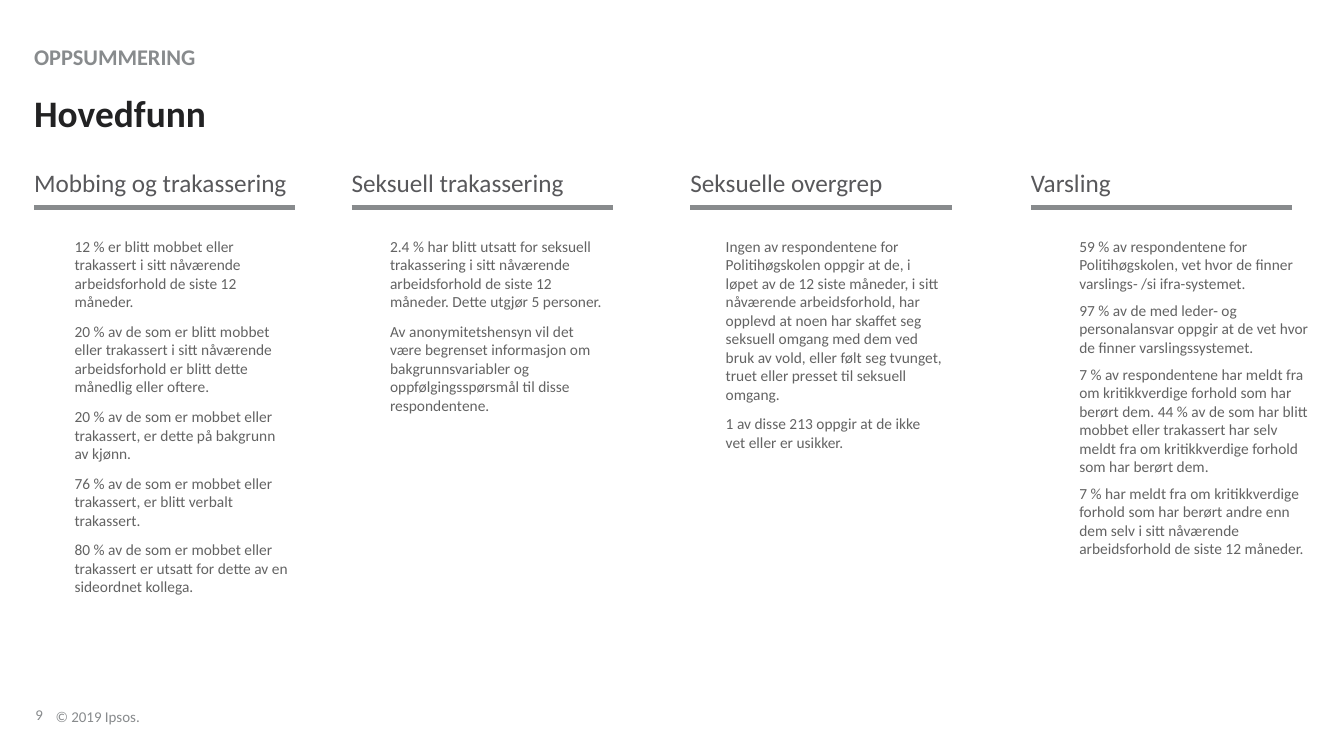
import pptx
import pptx.dml.color
import pptx.enum.shapes
import pptx.enum.text
import pptx.util
from lxml import etree
from pptx.oxml.ns import qn
from pptx.util import Cm

FONT = "Calibri"
GREY, BLACK, HEADING, BODY = "888B8D", "222223", "58585B", "636363"
LEFT = 0.86
HEADING_TOP, RULE_TOP, BODY_TOP = 4.22, 5.23, 5.97
COLUMN_WIDTH = 6.58

# heading, heading left, findings left, findings width, paragraph gap in points, findings
COLUMNS = [
    ("Mobbing og trakassering", LEFT, 1.88, 5.49, 8, [
        "12 % er blitt mobbet eller trakassert i sitt nåværende arbeidsforhold de siste 12 måneder.",
        "20 % av de som er blitt mobbet eller trakassert i sitt nåværende arbeidsforhold er blitt "
        "dette månedlig eller oftere.",
        "20 % av de som er mobbet eller trakassert, er dette på bakgrunn av kjønn.",
        "76 % av de som er mobbet eller trakassert, er blitt verbalt trakassert.",
        "80 % av de som er mobbet eller trakassert er utsatt for dette av en sideordnet kollega.",
    ]),
    ("Seksuell trakassering", 8.86, 9.83, 5.44, 8, [
        "2.4 % har blitt utsatt for seksuell trakassering i sitt nåværende arbeidsforhold de siste "
        "12 måneder. Dette utgjør 5 personer.",
        "Av anonymitetshensyn vil det være begrenset informasjon om bakgrunnsvariabler og "
        "oppfølgingsspørsmål til disse respondentene.",
    ]),
    ("Seksuelle overgrep", 17.4, 18.29, 5.49, 8, [
        "Ingen av respondentene for Politihøgskolen oppgir at de, i løpet av de 12 siste måneder, "
        "i sitt nåværende arbeidsforhold, har opplevd at noen har skaffet seg seksuell omgang med "
        "dem ved bruk av vold, eller følt seg tvunget, truet eller presset til seksuell omgang.",
        "1 av disse 213 oppgir at de ikke vet eller er usikker.",
    ]),
    ("Varsling", 25.98, 27.2, 5.87, 6, [
        "59 % av respondentene for Politihøgskolen, vet hvor de finner varslings- /si ifra-systemet.",
        "97 % av de med leder- og personalansvar oppgir at de vet hvor de finner varslingssystemet.",
        "7 % av respondentene har meldt fra om kritikkverdige forhold som har berørt dem. 44 % av "
        "de som har blitt mobbet eller trakassert har selv meldt fra om kritikkverdige forhold som "
        "har berørt dem.",
        "7 % har meldt fra om kritikkverdige forhold som har berørt andre enn dem selv i sitt "
        "nåværende arbeidsforhold de siste 12 måneder.",
    ]),
]


def rgb(value):
    return pptx.dml.color.RGBColor.from_string(value)


def add_text(s, paragraphs, left, top, width, height, *, size, color, bold=False,
             gap=0, line_spacing=1.0, anchor="TOP"):
    """Add a text box without insets; gap is the space in points between paragraphs."""
    tf = s.shapes.add_textbox(Cm(left), Cm(top), Cm(width), Cm(height)).text_frame
    tf.word_wrap = True
    tf.margin_left = tf.margin_right = tf.margin_top = tf.margin_bottom = 0
    tf.vertical_anchor = pptx.enum.text.MSO_ANCHOR[anchor]
    for i, text in enumerate(paragraphs):
        p = tf.add_paragraph() if i else tf.paragraphs[0]
        p.line_spacing = line_spacing
        if i:
            p.space_before = pptx.util.Pt(gap)
        r = p.add_run()
        r.text = text
        r.font.name = FONT
        r.font.size = pptx.util.Pt(size)
        r.font.bold = bold
        r.font.color.rgb = rgb(color)


def add_rule(s, left, top, width):
    line = s.shapes.add_connector(pptx.enum.shapes.MSO_CONNECTOR.STRAIGHT,
                                  Cm(left), Cm(top), Cm(left + width), Cm(top))
    line.line.color.rgb = rgb(GREY)
    line.line.width = pptx.util.Pt(3.5)
    etree.SubElement(line._element.spPr, qn("a:effectLst"))


def main():
    prs = pptx.Presentation()
    prs.slide_width, prs.slide_height = Cm(33.87), Cm(19.05)
    s = prs.slides.add_slide(prs.slide_layouts[6])

    add_text(s, ["OPPSUMMERING"], LEFT, 1.1, 24.84, 0.7, size=16, color=GREY, bold=True)
    add_text(s, ["Hovedfunn"], LEFT, 2.39, 29.16, 1.02, size=26.7, color=BLACK, bold=True,
             line_spacing=0.9)

    for heading, left, text_left, text_width, gap, findings in COLUMNS:
        add_rule(s, left, RULE_TOP, COLUMN_WIDTH)
        add_text(s, [heading], left, HEADING_TOP, COLUMN_WIDTH, 0.94, size=18, color=HEADING)
        add_text(s, findings, text_left, BODY_TOP, text_width, 9.4, size=11, color=BODY, gap=gap)

    footer = dict(size=10.7, color=GREY, line_spacing=0.85, anchor="BOTTOM")
    add_text(s, ["9"], 0.89, 17.6, 0.45, 0.64, **footer)
    add_text(s, ["© 2019 Ipsos."], 1.4, 17.65, 2.57, 0.64, **footer)

    prs.save("out.pptx")


if __name__ == "__main__":
    main()
